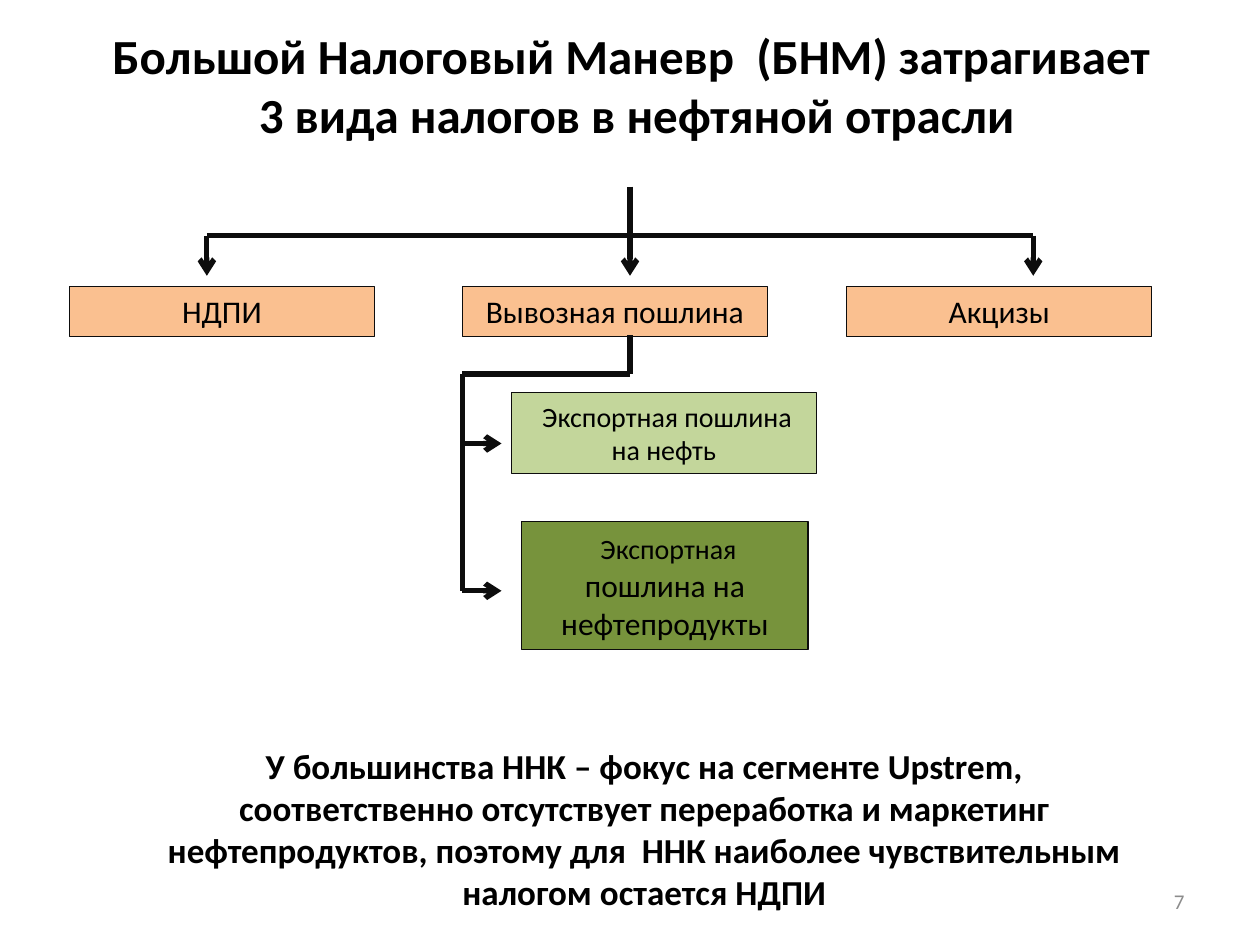
from typing import NamedTuple

from lxml.etree import SubElement
from pptx import Presentation
from pptx.dml.color import RGBColor
from pptx.enum.shapes import MSO_CONNECTOR as Conn, MSO_SHAPE as Shp
from pptx.enum.text import MSO_ANCHOR as Anchor, PP_ALIGN as Align
from pptx.oxml.ns import qn
from pptx.util import Cm, Pt

BLACK = RGBColor(0x00, 0x00, 0x00)
INK = RGBColor(0x0D, 0x0D, 0x0D)
GREY = RGBColor(0x8C, 0x8C, 0x8C)
ORANGE = RGBColor(0xFA, 0xC0, 0x90)
LIGHT_GREEN = RGBColor(0xC3, 0xD6, 0x9B)
GREEN = RGBColor(0x77, 0x93, 0x3C)


class Run(NamedTuple):
    text: str
    size: float
    bold: bool = False
    color: RGBColor = BLACK


class Area(NamedTuple):
    left: float
    top: float
    width: float
    height: float


class Box(NamedTuple):
    area: Area
    fill: RGBColor
    runs: list[Run]


class Line(NamedTuple):
    x1: float
    y1: float
    x2: float
    y2: float
    arrow: bool = False


def write(shape, runs: list[Run], align=Align.CENTER, anchor=Anchor.TOP) -> None:
    tf = shape.text_frame
    tf.word_wrap = True
    tf.vertical_anchor = anchor
    p = tf.paragraphs[0]
    p.alignment = align
    for run in runs:
        for i, part in enumerate(run.text.split("\n")):
            if i:
                p.add_line_break()
            r = p.add_run()
            r.text = part
            fmt = {"name": "Calibri", "size": Pt(run.size), "bold": run.bold}
            for key, value in fmt.items():
                setattr(r.font, key, value)
            r.font.color.rgb = run.color


def add_text(s, area: Area, run: Run, **layout) -> None:
    write(s.shapes.add_textbox(*map(Cm, area)), [run], **layout)


def add_box(s, box: Box) -> None:
    sp = s.shapes.add_shape(Shp.RECTANGLE, *map(Cm, box.area))
    sp.shadow.inherit = False
    sp.fill.solid()
    sp.fill.fore_color.rgb = box.fill
    sp.line.color.rgb = INK
    sp.line.width = Pt(0.75)
    write(sp, box.runs)


def add_line(s, line: Line) -> None:
    cxn = s.shapes.add_connector(Conn.STRAIGHT, *map(Cm, line[:4]))
    cxn.line.color.rgb = INK
    cxn.line.width = Pt(3)
    if line.arrow:
        SubElement(cxn.line._get_or_add_ln(), qn("a:tailEnd"), type="arrow")
    SubElement(cxn._element.spPr, qn("a:effectLst"))


# Text around the diagram
TITLE = Run("Большой Налоговый Маневр  (БНМ) затрагивает \n"
            "3 вида налогов в нефтяной отрасли", 28, True)
SUMMARY = Run("У большинства ННК – фокус на сегменте Upstrem, соответственно "
              "отсутствует переработка и маркетинг нефтепродуктов, поэтому для  "
              "ННК наиболее чувствительным налогом остается НДПИ", 20, True)

# Boxes: three taxes, then the two kinds of export duty
TAXES = {"НДПИ": 1.4, "Вывозная пошлина": 9.32, "Акцизы": 17.07}
BOXES = [Box(Area(x, 5.77, 6.15, 1.02), ORANGE, [Run(name, 18)])
         for name, x in TAXES.items()]
BOXES += [
    Box(Area(10.52, 10.52, 5.77, 2.57), GREEN,
        [Run(" ", 18), Run("Экспортная", 16), Run(" пошлина на нефтепродукты", 18)]),
    Box(Area(10.31, 7.92, 6.15, 1.63), LIGHT_GREEN,
        [Run(" Экспортная пошлина на нефть", 16)]),
]

# Tree from the title to the taxes
LEFT, CENTER, RIGHT = 4.17, 12.7, 20.83
BAR = 4.75
LINES = [Line(CENTER, 3.76, CENTER, BAR), Line(LEFT, BAR, RIGHT, BAR)]
LINES += [Line(x, BAR, x, 5.56, True) for x in (LEFT, CENTER, RIGHT)]

# Branch from the export duty to its two kinds
TRUNK, ELBOW, KINDS = 9.32, 7.54, (8.94, 11.91)
LINES += [
    Line(CENTER, 6.76, CENTER, ELBOW),
    Line(TRUNK, ELBOW, CENTER, ELBOW),
    Line(TRUNK, ELBOW, TRUNK, KINDS[-1]),
]
LINES += [Line(TRUNK, y, 10.11, y, True) for y in KINDS]


def main() -> None:
    prs = Presentation()
    prs.slide_width, prs.slide_height = Cm(25.4), Cm(19.05)
    s = prs.slides.add_slide(prs.slide_layouts[6])

    add_text(s, Area(1.4, 0.41, 22.86, 2.59), TITLE, anchor=Anchor.MIDDLE)
    add_text(s, Area(18.21, 17.65, 5.92, 1.02), Run("7", 12, color=GREY),
             align=Align.RIGHT, anchor=Anchor.MIDDLE)
    add_text(s, Area(2.97, 14.88, 20.04, 3.68), SUMMARY)
    for box in BOXES:
        add_box(s, box)
    for line in LINES:
        add_line(s, line)

    prs.save("out.pptx")


if __name__ == "__main__":
    main()
